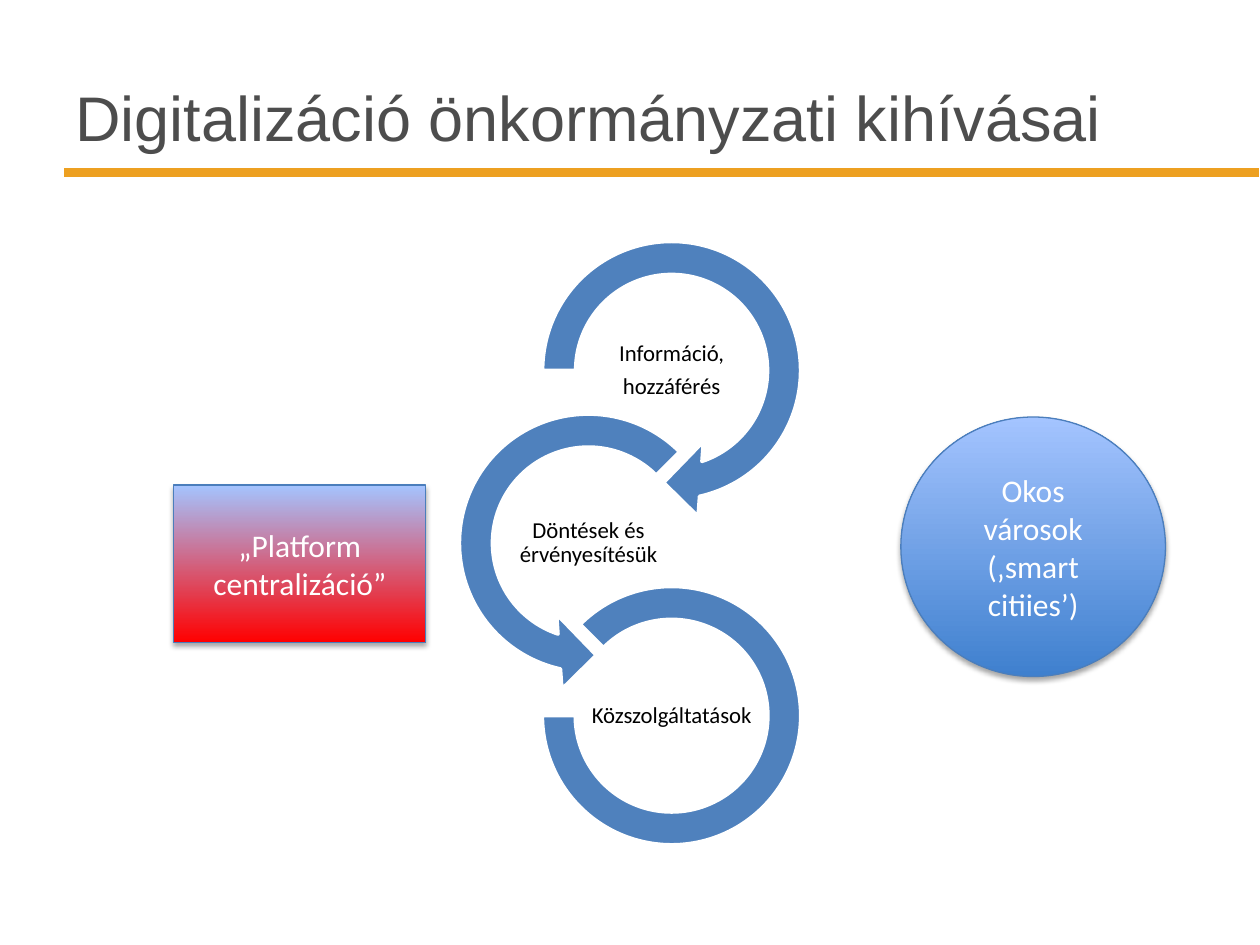
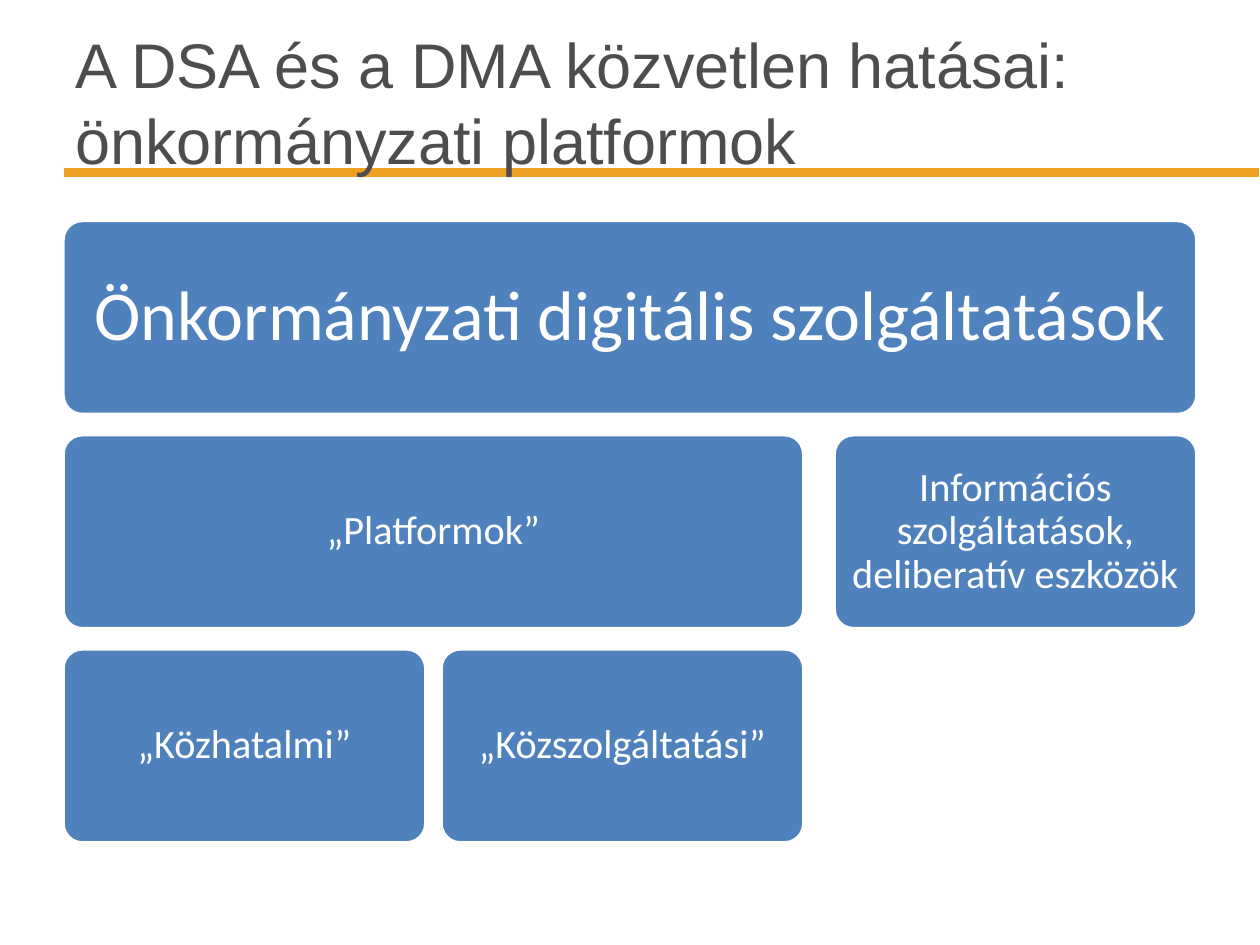
from collections import namedtuple
from lxml import etree
from pptx import Presentation
from pptx.dml.color import RGBColor
from pptx.enum.shapes import MSO_SHAPE as Shape
from pptx.enum.text import MSO_ANCHOR as Anchor, PP_ALIGN as Align
from pptx.oxml.ns import qn
from pptx.util import Inches, Pt

# Slide grid: 100 columns by 75 rows
SLIDE_W, SLIDE_H = Inches(10), Inches(7.5)
COL, ROW = SLIDE_W / 100, SLIDE_H / 75

ORANGE, GREY, BLUE, EDGE = "EDA021", "4D4D4D", "4F81BD", "4B7EBC"
WHITE, BLACK, SKY, DEEP, RED = "FFFFFF", "000000", "A4C4FF", "3F80CE", "FF0000"

Box = namedtuple("Box", "x y w h")  # in columns and rows


def color(hex_text):
    return RGBColor.from_string(hex_text)


def emu(box):
    return [round(n * unit) for n, unit in zip(box, (COL, ROW, COL, ROW))]


def centred(x, y, w, h):
    return Box(x - w / 2, y - h / 2, w, h)


def write(sp, text, size, ink, font="Calibri", align=Align.CENTER,
          inset=None, spacing=None, after=0):
    tf = sp.text_frame
    tf.word_wrap = True
    tf.vertical_anchor = Anchor.MIDDLE
    if inset is not None:
        tf.margin_left = tf.margin_right = Inches(inset)
        tf.margin_top = tf.margin_bottom = Inches(inset)
    tf.text = text
    for p in tf.paragraphs:
        p.alignment = align
        p.line_spacing = spacing
        p.space_after = Pt(after)
        for r in p.runs:
            r.font.name, r.font.size = font, Pt(size)
            r.font.color.rgb = color(ink)


def add_text(s, box, text, size, ink, **style):
    write(s.shapes.add_textbox(*emu(box)), text, size, ink, **style)


def add_shape(s, kind, box, fill, line=WHITE, weight=2, adjust=()):
    """Fill is one colour, or a (bottom, top) pair for a gradient."""
    sp = s.shapes.add_shape(kind, *emu(box))
    sp.shadow.inherit = False
    if isinstance(fill, tuple):
        sp.fill.gradient()
        sp.fill.gradient_angle = 90
        for stop, shade in zip(sp.fill.gradient_stops, fill):
            stop.color.rgb = color(shade)
        sp.fill.gradient_stops[0].position = 0
        sp.fill.gradient_stops[1].position = 1
    else:
        sp.fill.solid()
        sp.fill.fore_color.rgb = color(fill)
    sp.line.color.rgb = color(line)
    sp.line.width = Pt(weight)
    for i, value in enumerate(adjust):
        sp.adjustments[i] = value
    return sp


def drop_shadow(sp):
    effects = sp._element.spPr.find(qn("a:effectLst"))
    shadow = etree.SubElement(effects, qn("a:outerShdw"), blurRad=str(Pt(3.1)),
                              dist=str(Pt(1.8)), dir="5400000", rotWithShape="0")
    shade = etree.SubElement(shadow, qn("a:srgbClr"), val=BLACK)
    etree.SubElement(shade, qn("a:alpha"), val="35000")


def new_slide(prs, title, title_top):
    s = prs.slides.add_slide(prs.slide_layouts[6])
    # Band below the title
    add_shape(s, Shape.RECTANGLE, Box(5, 13.3, 95, 0.8), ORANGE, weight=0.75)
    add_text(s, Box(5, title_top, 90, 12.5), title, 36, GREY,
             font="Arial", align=Align.LEFT)
    return s


def ring_chain(s, area):
    """Three linked rings, alternately right and left, with centred labels."""
    size, thin = 23.8, 20.5
    right, left = area.x + area.w - size / 2, area.x + size / 2
    top, pitch = area.y + size / 2, 13.7
    rings = [
        (Shape.CIRCULAR_ARROW, right, size, (0.11, 11.42, 45, 108, 0.125),
         "Információ,\nhozzáférés"),
        (Shape.LEFT_CIRCULAR_ARROW, left, size, (0.11, 11.42, 63, 189, 0.125),
         "Döntések és érvényesítésük"),
        (Shape.BLOCK_ARC, right, thin, (135, 108, 0.127), "Közszolgáltatások"),
    ]
    for i, (kind, x, width, adjust, label) in enumerate(rings):
        y = top + i * pitch
        add_shape(s, kind, centred(x, y, width, width), BLUE, adjust=adjust)
        add_text(s, centred(x, y, 13.2, 6.6), label, 13, BLACK,
                 inset=0.01, spacing=0.9, after=4.5)


def callout(s, kind, box, fill, text):
    sp = add_shape(s, kind, box, fill, EDGE, 0.75)
    drop_shadow(sp)
    write(sp, text, 18, WHITE)


def service_tree(s, area):
    """Rows of cards: a card spans columns of the level below it."""
    gap, branch_gap, row_gap = 1.2, 2.4, 1.6
    card_w = (area.w - gap - branch_gap) / 3
    card_h = (area.h - 2 * row_gap) / 3
    starts = [0, card_w + gap, 2 * card_w + gap + branch_gap]
    cards = [  # row, first column, last column, text, size, inset
        (0, 0, 2, "Önkormányzati digitális szolgáltatások", 40, 0.17),
        (1, 0, 1, "„Platformok”", 23, 0.1),
        (2, 0, 0, "„Közhatalmi”", 23, 0.1),
        (2, 1, 1, "„Közszolgáltatási”", 23, 0.1),
        (1, 2, 2, "Információs szolgáltatások, deliberatív eszközök", 23, 0.1),
    ]
    for row, first, last, text, size, inset in cards:
        box = Box(area.x + starts[first], area.y + row * (card_h + row_gap),
                  starts[last] + card_w - starts[first], card_h)
        sp = add_shape(s, Shape.ROUNDED_RECTANGLE, box, BLUE, adjust=(0.1,))
        write(sp, text, size, WHITE, inset=inset, spacing=0.9, after=size * 0.35)


def main():
    prs = Presentation()
    prs.slide_width, prs.slide_height = SLIDE_W, SLIDE_H

    # Challenges of digitalisation
    s = new_slide(prs, "Digitalizáció önkormányzati kihívásai", 3)
    ring_chain(s, Box(34.8, 17.5, 30.4, 49.5))
    callout(s, Shape.OVAL, Box(71.5, 33.1, 21, 20.6), (DEEP, SKY),
            "Okos városok (‚smart citiies’)")
    callout(s, Shape.RECTANGLE, Box(13.8, 38.5, 20, 12.5), (RED, SKY),
            "„Platform centralizáció”")

    # Municipal platforms
    s = new_slide(prs, "A DSA és a DMA közvetlen hatásai: önkormányzati platformok", 1.8)
    service_tree(s, Box(5, 17.5, 90, 49.4))

    prs.save("out.pptx")


if __name__ == "__main__":
    main()
